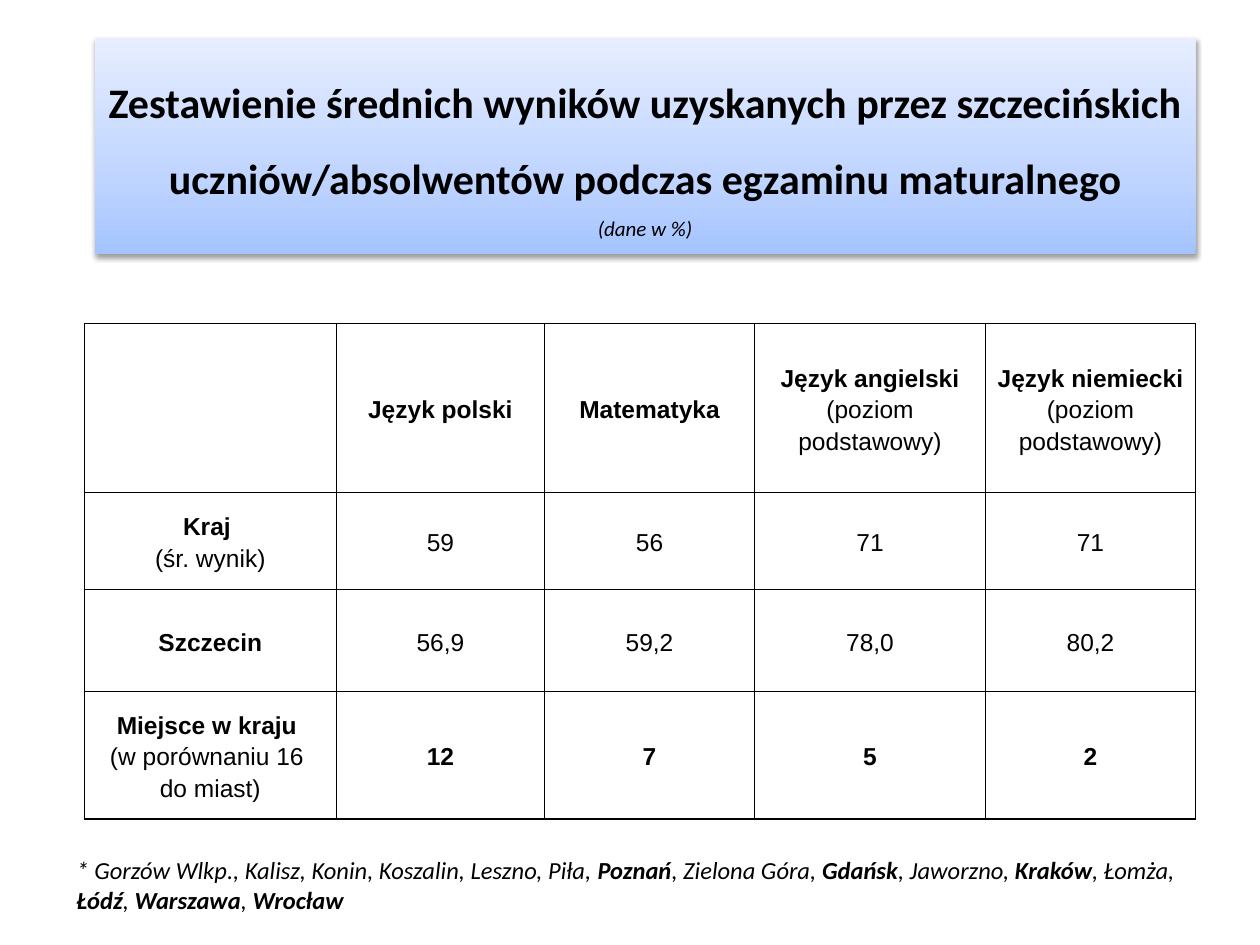
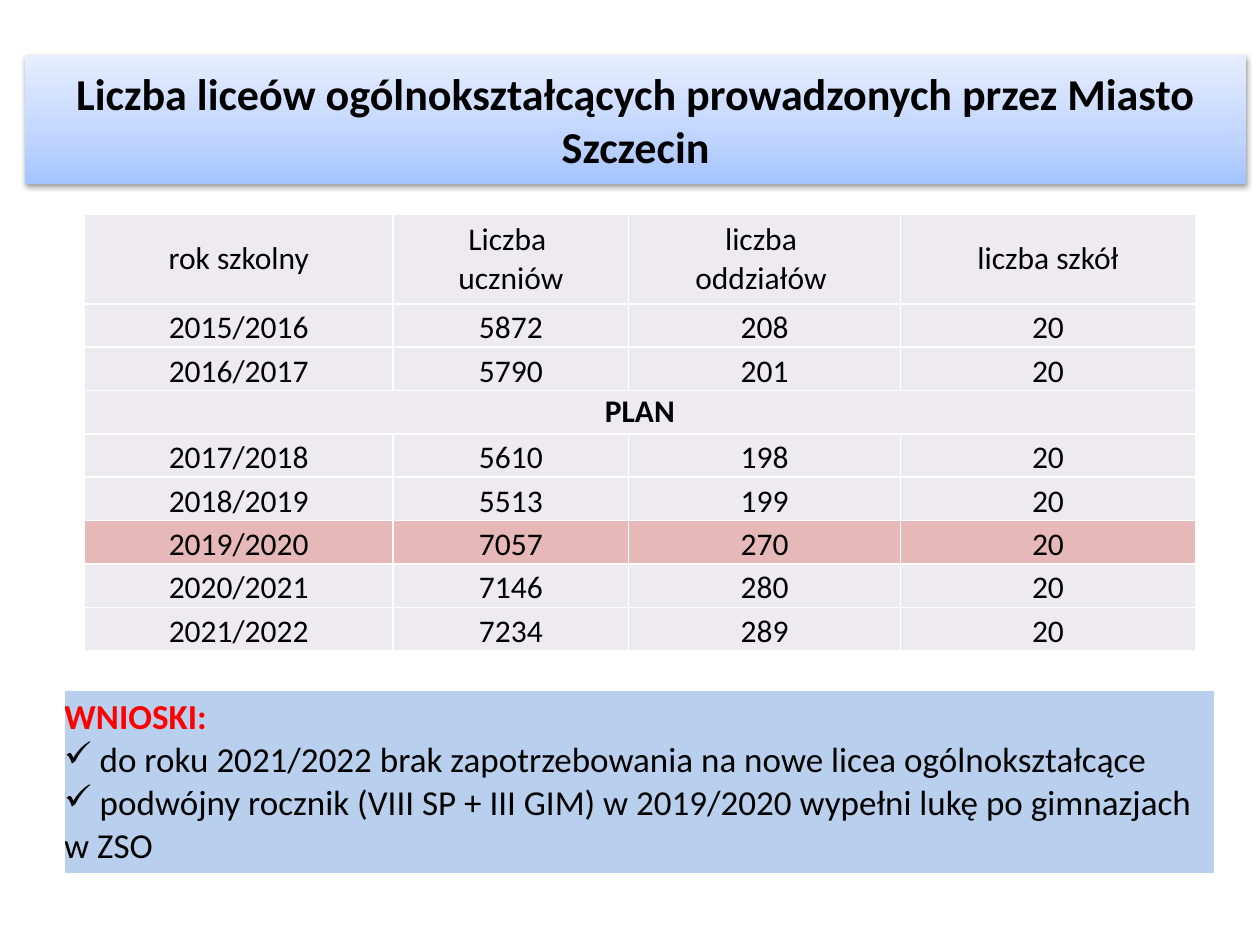
from copy import deepcopy

from pptx import Presentation
from pptx.dml.color import RGBColor
from pptx.enum.text import MSO_ANCHOR, PP_ALIGN
from pptx.oxml import parse_xml
from pptx.oxml.ns import nsdecls
from pptx.util import Pt

CENTER, LEFT = PP_ALIGN.CENTER, PP_ALIGN.LEFT
MIDDLE, BOTTOM = MSO_ANCHOR.MIDDLE, MSO_ANCHOR.BOTTOM
BLACK, WHITE, RED = "000000", "FFFFFF", "FF0000"
ROW_FILL, PEAK_FILL, NOTE_FILL = "EDEAF0", "E6B9B8", "8EB4E3"
BAND_STOPS = [(0, "A4C4FF"), (35, "BFD4FF"), (100, "E6EEFF")]


def rgb(value):
    return RGBColor.from_string(value)


def xml(tag, body="", attrs=""):
    return parse_xml(f"<a:{tag} {nsdecls('a')} {attrs}>{body}</a:{tag}>")


def color_xml(color, alpha=100):
    return f'<a:srgbClr val="{color}"><a:alpha val="{alpha * 1000}"/></a:srgbClr>'


def write(p, text, size=18, font="Calibri", color=BLACK, bold=False, italic=False,
          align=LEFT, spacing=None):
    p.alignment = align
    if spacing:
        p.line_spacing = spacing
    for i, part in enumerate(text.split("**")):
        for j, line in enumerate(part.split("\v")):
            if j:
                br = p._p.add_br()
                br.append(deepcopy(r._r.rPr))
            if line:
                r = p.add_run()
                r.text = line
                r.font.size = Pt(size)
                r.font.name = font
                r.font.color.rgb = rgb(color)
                r.font.bold = bold or i % 2 == 1
                r.font.italic = italic


class Deck:
    def __init__(self):
        self.prs = Presentation()
        self.prs.slide_width, self.prs.slide_height = Pt(720), Pt(540)
        self.s = None

    def slide(self):
        self.s = self.prs.slides.add_slide(self.prs.slide_layouts[5])

    def title(self, x, y, w, h, text, size, spacing=None):
        sp = self.s.shapes.title
        sp.left, sp.top, sp.width, sp.height = Pt(x), Pt(y), Pt(w), Pt(h)
        stops = "".join(f'<a:gs pos="{pos * 1000}">{color_xml(color)}</a:gs>'
                        for pos, color in BAND_STOPS)
        sp._element.spPr.append(xml(
            "gradFill", f'<a:gsLst>{stops}</a:gsLst><a:lin ang="16200000" scaled="0"/>'))
        sp._element.spPr.append(xml(
            "effectLst",
            f'<a:outerShdw blurRad="{Pt(3.1)}" dist="{Pt(1.6)}" dir="5400000" '
            f'rotWithShape="0">{color_xml(BLACK, 38)}</a:outerShdw>'))
        tf = sp.text_frame
        tf.word_wrap = True
        tf.vertical_anchor = MIDDLE
        p = tf.paragraphs[0]
        write(p, text, size=size, bold=True, align=CENTER, spacing=spacing)
        return p

    def text(self, x, y, w, h, text, **fmt):
        tf = self.s.shapes.add_textbox(Pt(x), Pt(y), Pt(w), Pt(h)).text_frame
        tf.word_wrap = True
        write(tf.paragraphs[0], text, **fmt)

    def table(self, x, y, widths, heights):
        frame = self.s.shapes.add_table(len(heights), len(widths), Pt(x), Pt(y),
                                        Pt(sum(widths)), Pt(sum(heights)))
        table = frame.table
        table.first_row = table.horz_banding = False
        for column, width in zip(table.columns, widths):
            column.width = Pt(width)
        for row, height in zip(table.rows, heights):
            row.height = Pt(height)
        return table

    def cell(self, cell, text, fill=None, border=None, margin=0, anchor=MIDDLE, **fmt):
        cell.margin_left = cell.margin_right = Pt(margin)
        cell.margin_top = cell.margin_bottom = 0
        cell.vertical_anchor = anchor
        if fill:
            cell.fill.solid()
            cell.fill.fore_color.rgb = rgb(fill)
        else:
            cell.fill.background()
        if border:
            line = f"<a:solidFill>{color_xml(border)}</a:solidFill>"
            for i, side in enumerate("LRTB"):
                cell._tc.tcPr.insert(i, xml(f"ln{side}", line, f'w="{Pt(1)}"'))
        for i, part in enumerate(text.split("\n")):
            p = cell.text_frame.add_paragraph() if i else cell.text_frame.paragraphs[0]
            write(p, part, **fmt)

    def conclusions(self, x, y, w, h, heading, points):
        cell = self.table(x, y, [w], [h]).cell(0, 0)
        self.cell(cell, heading, fill=NOTE_FILL, size=20, color=RED, bold=True)
        srgb = cell._tc.tcPr.find(".//{*}srgbClr")
        srgb.append(xml("alpha", attrs='val="62000"'))
        for point in points:
            p = cell.text_frame.add_paragraph()
            write(p, point, size=20)
            p._p.get_or_add_pPr().append(xml("buChar", attrs='char="✓"'))


def exam_results(deck):
    deck.slide()
    p = deck.title(54, 21.6, 629.3, 123.8,
                   "Zestawienie średnich wyników uzyskanych przez szczecińskich "
                   "uczniów/absolwentów podczas egzaminu maturalnego\v", 24, 1.5)
    write(p, "(dane w %)", size=12, italic=True, align=CENTER, spacing=1.5)
    results = [
        ["", "**Język polski**", "**Matematyka**",
         "**Język angielski**\n(poziom podstawowy)",
         "**Język niemiecki**\n(poziom podstawowy)"],
        ["**Kraj **\n(śr. wynik)", "59", "56", "71", "71"],
        ["**Szczecin**", "56,9", "59,2", "78,0", "80,2"],
        ["**Miejsce w kraju **\n(w porównaniu 16 \vdo miast)",
         "**12**", "**7**", "**5**", "**2**"],
    ]
    table = deck.table(48.2, 185, [144, 119, 120, 132, 120], [96.5, 55.5, 58.3, 72.7])
    for i, row in enumerate(results):
        for j, text in enumerate(row):
            deck.cell(table.cell(i, j), text, border=BLACK, margin=5, size=14,
                      font="Arial", align=CENTER, spacing=1.15)
    deck.text(36.7, 485.3, 663, 63.4,
              "* Gorzów Wlkp., Kalisz, Konin, Koszalin, Leszno, Piła, **Poznań**, "
              "Zielona Góra, **Gdańsk**, Jaworzno, **Kraków**, Łomża, **Łódź**, "
              "**Warszawa**, **Wrocław**", size=14, italic=True)


def school_numbers(deck):
    deck.slide()
    deck.title(14.4, 31.7, 697.7, 73.4,
               "Liczba liceów ogólnokształcących prowadzonych przez Miasto Szczecin", 25.2)
    years = [
        ["rok szkolny", "Liczba \vuczniów", "liczba \voddziałów ", "liczba szkół"],
        ["2015/2016", "5872", "208", "20"],
        ["2016/2017", "5790", "201", "20"],
        ["PLAN", "", "", ""],
        ["2017/2018", "5610", "198", "20"],
        ["2018/2019", "5513", "199", "20"],
        ["2019/2020", "7057", "270", "20"],
        ["2020/2021", "7146", "280", "20"],
        ["2021/2022", "7234", "289", "20"],
    ]
    table = deck.table(48.2, 122.6, [176.5, 134.5, 155.5, 168.5], [51] + [24.8] * 8)
    for i, row in enumerate(years):
        is_plan = row[0] == "PLAN"
        for j, text in enumerate(row):
            deck.cell(table.cell(i, j), text, border=WHITE, align=CENTER, bold=is_plan,
                      fill=PEAK_FILL if row[0] == "2019/2020" else ROW_FILL,
                      anchor=MIDDLE if i == 0 or is_plan else BOTTOM)
        if is_plan:
            table.cell(i, 0).merge(table.cell(i, len(row) - 1))
    deck.conclusions(36.7, 394.6, 657.4, 104.4, "WNIOSKI:", [
        " do roku 2021/2022 brak zapotrzebowania na nowe licea ogólnokształcące",
        " podwójny rocznik (VIII SP + III GIM) w 2019/2020 wypełni lukę po gimnazjach w ZSO",
    ])


def main():
    deck = Deck()
    exam_results(deck)
    school_numbers(deck)
    deck.prs.save("out.pptx")


if __name__ == "__main__":
    main()
